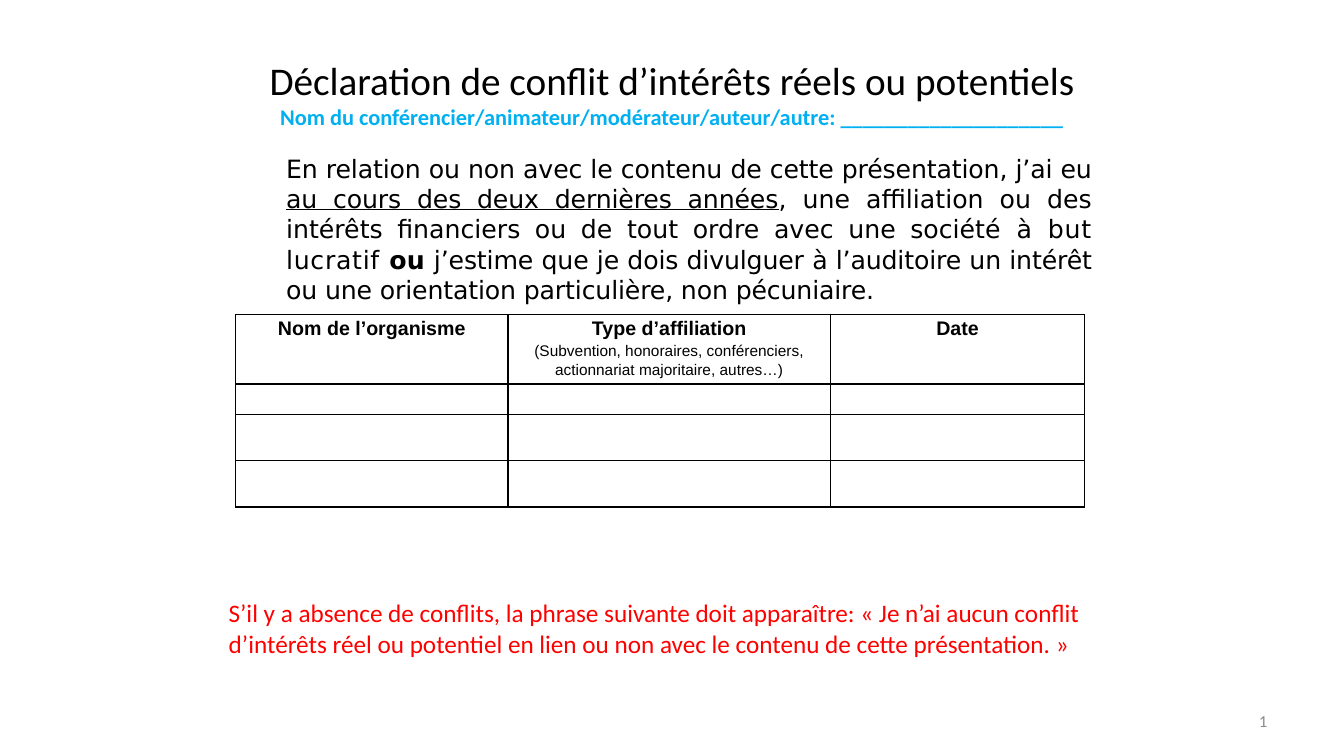
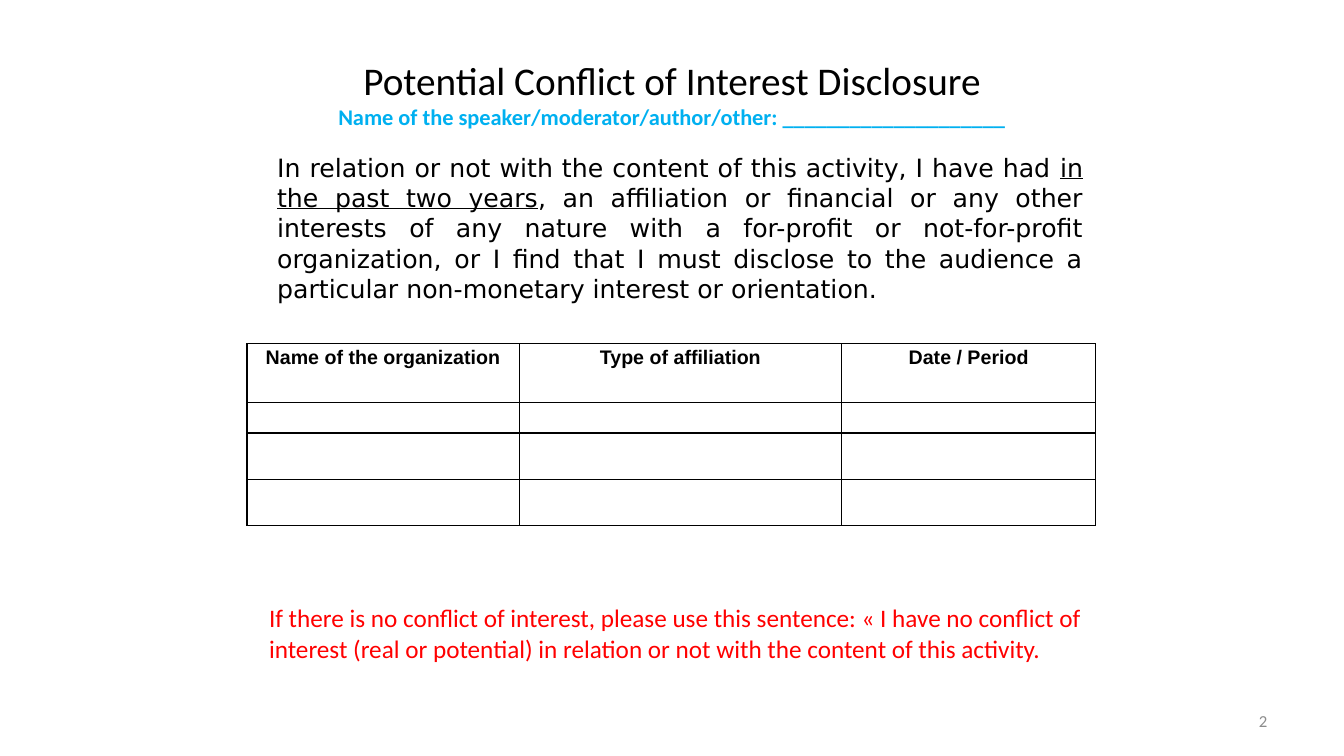
from dataclasses import dataclass, field
from typing import NamedTuple

from lxml import etree
from pptx import Presentation
from pptx.dml.color import RGBColor
from pptx.enum.text import MSO_ANCHOR, PP_ALIGN
from pptx.oxml.ns import qn
from pptx.util import Inches, Pt

CENTER, JUSTIFY, RIGHT = PP_ALIGN.CENTER, PP_ALIGN.JUSTIFY, PP_ALIGN.RIGHT
TOP, MIDDLE = MSO_ANCHOR.TOP, MSO_ANCHOR.MIDDLE

SLIDE_WIDTH, SLIDE_HEIGHT = Inches(13.33), Inches(7.5)
TITLE_ONLY = 5
COLORS = {"ink": "000000", "name": "00B0F0", "advice": "FF0000", "number": "8C8C8C"}
STYLES = {
    "title": {"size": Pt(28), "name": "Calibri", "color": "ink"},
    "name": {"size": Pt(16), "name": "Calibri", "bold": True, "color": "name"},
    "statement": {"size": Pt(18), "name": "DejaVu Sans", "color": "ink"},
    "header": {"size": Pt(14), "name": "Arial", "bold": True, "color": "ink"},
    "detail": {"size": Pt(11), "name": "Arial", "bold": False, "color": "ink"},
    "advice": {"size": Pt(18), "name": "Calibri", "color": "advice"},
    "number": {"size": Pt(12), "name": "Calibri", "color": "number"},
}


class Area(NamedTuple):
    """A rectangle in hundredths of the slide's width and height."""
    left: float
    top: float
    width: float
    height: float

    def lengths(self) -> tuple[int, int, int, int]:
        return (across(self.left), down(self.top),
                across(self.width), down(self.height))


class Span(NamedTuple):
    text: str
    changes: dict = {}
    spacing: float = 0


@dataclass
class Disclosure:
    title: str
    name_line: str
    statement: list[Span]
    headers: list[str]
    advice: str
    statement_at: tuple[float, float]
    table_at: tuple[float, float]
    advice_at: tuple[float, float]
    header_height: float
    details: dict[int, str] = field(default_factory=dict)


TITLE_AREA = Area(5, 4, 90, 16.67)
NUMBER_AREA = Area(71.7, 92.67, 23.33, 5.33)
STATEMENT_SIZE = (62.64, 25.6)
ADVICE_SIZE = (65.04, 9.47)
TABLE_COLUMNS = (20.25, 24, 18.9)
ENTRY_ROWS = (4, 6.13, 6.13)

DISCLOSURES = [
    Disclosure(
        title="Déclaration de conflit d’intérêts réels ou potentiels",
        name_line="Nom du conférencier/animateur/modérateur/auteur/autre: ____________________",
        statement=[
            Span("En relation ou non avec le contenu de cette présentation, j’ai eu ", spacing=-0.1),
            Span("au cours des deux dernières années", {"underline": True}, -0.1),
            Span(", une affiliation ou des intérêts financiers ou de tout ordre avec une société"),
            Span(" à but lucratif ", spacing=0.5),
            Span("ou ", {"bold": True}),
            Span("j’estime que je dois divulguer à l’auditoire un intérêt ou une orientation "
                 "particulière, non pécuniaire.", spacing=-0.1),
        ],
        headers=["Nom de l’organisme", "Type d’affiliation", "Date"],
        details={1: "(Subvention, honoraires, conférenciers, actionnariat majoritaire, autres…)"},
        advice="S’il y a absence de conflits, la phrase suivante doit apparaître: « Je n’ai aucun "
               "conflit d’intérêts réel ou potentiel en lien ou non avec le contenu de cette "
               "présentation. »",
        statement_at=(19.95, 19.6),
        table_at=(17.55, 41.6),
        advice_at=(16.28, 78.4),
        header_height=8.6,
    ),
    Disclosure(
        title="Potential Conflict of Interest Disclosure",
        name_line="Name of the speaker/moderator/author/other: ____________________",
        statement=[
            Span("In relation or not with the content of this activity, I have had "),
            Span("in the past two years", {"underline": True}),
            Span(", an affiliation or financial or any other interests of any nature with a "
                 "for-profit or not-for-profit organization, or I find that I must disclose to "
                 "the audience a particular non-monetary interest or orientation."),
        ],
        headers=["Name of the organization", "Type of affiliation", "Date / Period"],
        advice="If there is no conflict of interest, please use this sentence: « I have no "
               "conflict of interest (real or potential) in relation or not with the content "
               "of this activity.",
        statement_at=(19.28, 19.47),
        table_at=(18.38, 45.47),
        advice_at=(19.28, 79.07),
        header_height=7.8,
    ),
]


def across(share: float) -> int:
    return round(SLIDE_WIDTH * share / 100)


def down(share: float) -> int:
    return round(SLIDE_HEIGHT * share / 100)


def format_font(font, style: str, changes: dict) -> None:
    values = STYLES[style] | changes
    font.color.rgb = RGBColor.from_string(COLORS[values.pop("color")])
    for attribute, value in values.items():
        setattr(font, attribute, value)


def add_span(para, span: Span, style: str):
    run = para.add_run()
    run.text = span.text
    format_font(run.font, style, span.changes)
    if span.spacing:
        run.font._element.set("spc", str(round(span.spacing * 100)))
    return run


def add_text_box(slide, area: Area, anchor=TOP):
    """Add a wrapping text box and return its first paragraph."""
    frame = slide.shapes.add_textbox(*area.lengths()).text_frame
    frame.word_wrap = True
    frame.vertical_anchor = anchor
    return frame.paragraphs[0]


def fill_title(slide, disclosure: Disclosure) -> None:
    box = slide.shapes.title
    box.left, box.top, box.width, box.height = TITLE_AREA.lengths()
    box.text_frame.vertical_anchor = MIDDLE
    para = box.text_frame.paragraphs[0]
    para.alignment = CENTER
    add_span(para, Span(disclosure.title), "title")
    para.add_line_break()
    add_span(para, Span(disclosure.name_line), "name")


def add_statement(slide, disclosure: Disclosure) -> None:
    para = add_text_box(slide, Area(*disclosure.statement_at, *STATEMENT_SIZE))
    para.alignment = JUSTIFY
    properties = para._p.get_or_add_pPr()
    for side in ("marL", "marR"):
        properties.set(side, str(Inches(0.08)))
    for span in disclosure.statement:
        add_span(para, span, "statement")


def add_slide_number(slide, number: int) -> None:
    para = add_text_box(slide, NUMBER_AREA, MIDDLE)
    para.alignment = RIGHT
    run = add_span(para, Span(str(number)), "number")._r
    number_field = etree.SubElement(para._p, qn("a:fld"), {
        "id": "{B6F15528-21DE-4FAA-801E-634DDDAF4B2B}", "type": "slidenum"})
    number_field.extend(list(run))
    para._p.remove(run)


def draw_borders(cell) -> None:
    """Line all four sides; the lines must precede the fill in the cell's XML."""
    properties = cell._tc.get_or_add_tcPr()
    for position, side in enumerate(("a:lnL", "a:lnR", "a:lnT", "a:lnB")):
        line = etree.Element(qn(side), w=str(Pt(1)))
        fill = etree.SubElement(line, qn("a:solidFill"))
        etree.SubElement(fill, qn("a:srgbClr"), val=COLORS["ink"])
        properties.insert(position, line)


def add_header_line(para, text: str, style: str) -> None:
    para.alignment = CENTER
    para.line_spacing = 1.15
    add_span(para, Span(text), style)


def add_affiliation_table(slide, disclosure: Disclosure) -> None:
    heights = (disclosure.header_height, *ENTRY_ROWS)
    area = Area(*disclosure.table_at, sum(TABLE_COLUMNS), sum(heights))
    table = slide.shapes.add_table(
        len(heights), len(TABLE_COLUMNS), *area.lengths()).table
    table.first_row = table.horz_banding = False
    for column, width in zip(table.columns, TABLE_COLUMNS):
        column.width = across(width)
    for row, height in zip(table.rows, heights):
        row.height = down(height)
    for cell in table.iter_cells():
        cell.margin_left = cell.margin_right = Inches(0.03)
        cell.margin_top = cell.margin_bottom = 0
        cell.fill.background()
        draw_borders(cell)
    for index, header in enumerate(disclosure.headers):
        frame = table.cell(0, index).text_frame
        add_header_line(frame.paragraphs[0], header, "header")
        if index in disclosure.details:
            add_header_line(frame.add_paragraph(), disclosure.details[index], "detail")


def add_disclosure_slide(deck, disclosure: Disclosure, number: int) -> None:
    slide = deck.slides.add_slide(deck.slide_layouts[TITLE_ONLY])
    fill_title(slide, disclosure)
    add_slide_number(slide, number)
    add_affiliation_table(slide, disclosure)
    add_statement(slide, disclosure)
    advice = add_text_box(slide, Area(*disclosure.advice_at, *ADVICE_SIZE))
    add_span(advice, Span(disclosure.advice), "advice")


def main() -> None:
    deck = Presentation()
    deck.slide_width, deck.slide_height = SLIDE_WIDTH, SLIDE_HEIGHT
    for number, disclosure in enumerate(DISCLOSURES, start=1):
        add_disclosure_slide(deck, disclosure, number)
    deck.save("out.pptx")


if __name__ == "__main__":
    main()
